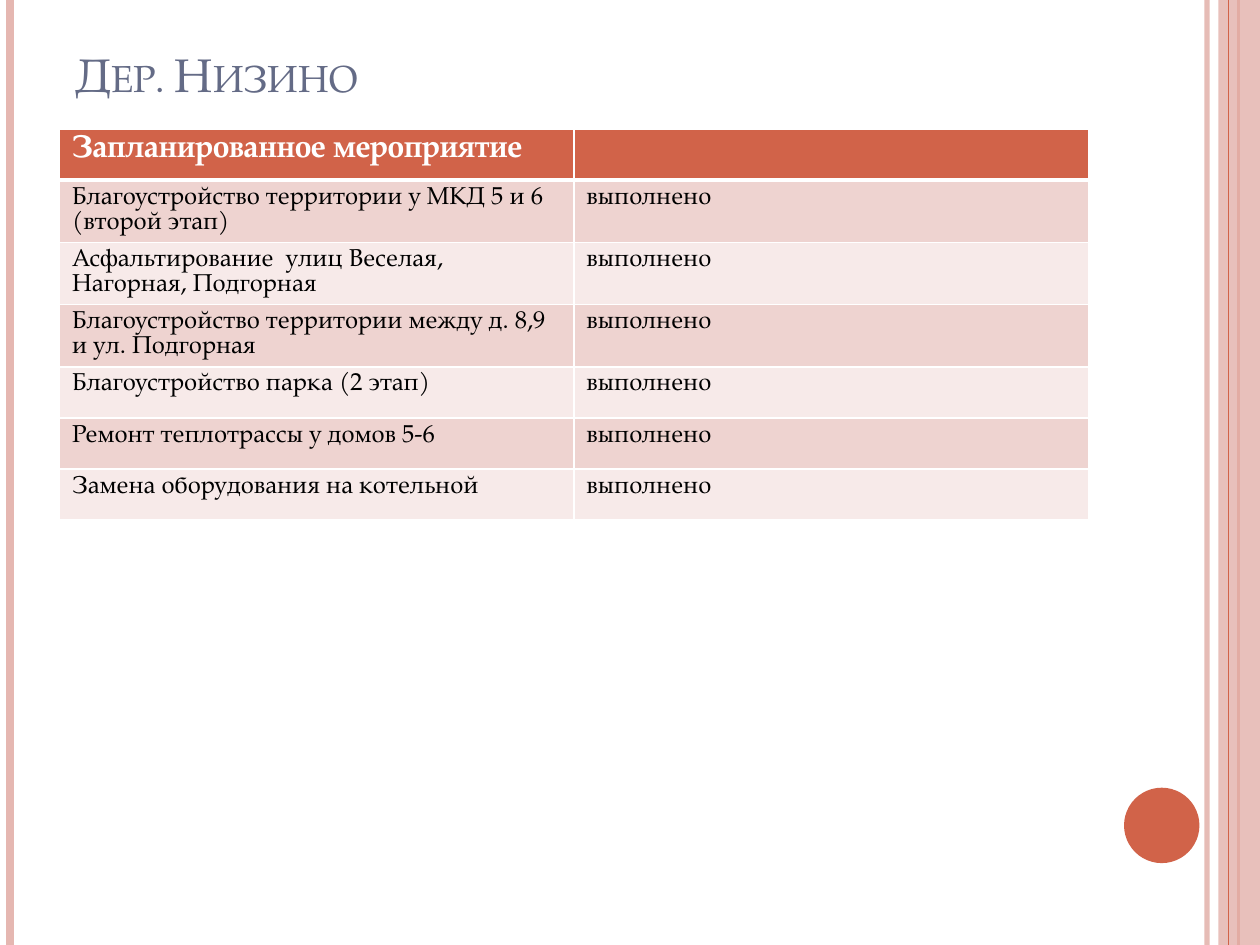
from lxml.etree import SubElement
from pptx import Presentation
from pptx.dml.color import RGBColor
from pptx.enum.shapes import MSO_CONNECTOR, MSO_SHAPE
from pptx.enum.text import MSO_ANCHOR, PP_ALIGN
from pptx.oxml.ns import qn
from pptx.util import Cm, Pt

FONT = "TeX Gyre Pagella"
RUST = RGBColor(0xD1, 0x63, 0x49)
PINK = RGBColor(0xE5, 0xB7, 0xB1)
SLATE = RGBColor(0x64, 0x6B, 0x86)
WHITE = RGBColor(0xFF, 0xFF, 0xFF)
BLACK = RGBColor(0, 0, 0)
BANDS = [RGBColor(0xEE, 0xD3, 0xD0), RGBColor(0xF7, 0xEA, 0xE9)]

HEADERS = ("Запланированное мероприятие", "")
DONE = "выполнено"
WORKS = [
    "Благоустройство территории у МКД 5 и 6 (второй этап)",
    "Асфальтирование  улиц Веселая, Нагорная, Подгорная",
    "Благоустройство территории между д. 8,9 и ул. Подгорная",
    "Благоустройство парка (2 этап)",
    "Ремонт теплотрассы у домов 5-6",
    "Замена оборудования на котельной",
]


def set_alpha(fill, percent):
    color = fill._xPr.find(qn("a:solidFill"))[0]
    SubElement(color, qn("a:alpha")).set("val", str(percent * 1000))


def add_borders(cell, bottom_width):
    """Draw white cell borders; they must precede the fill in the XML."""
    props = cell._tc.get_or_add_tcPr()
    for side, width in (("L", 1), ("R", 1), ("T", 1), ("B", bottom_width)):
        border = SubElement(props, qn(f"a:ln{side}"), w=str(Pt(width)))
        solid = SubElement(border, qn("a:solidFill"))
        SubElement(solid, qn("a:srgbClr"), val=str(WHITE))


deck = Presentation()
deck.slide_width, deck.slide_height = Cm(25.4), Cm(19.05)
page = deck.slides.add_slide(deck.slide_layouts[5])

# Side stripes: the second rust line lies under the translucent band
band = None
for x, color, width, alpha in [
    (24.33, PINK, 3, 93),
    (0.2, PINK, 4.5, 100),
    (24.97, RUST, 1.5, 100),
    (24.77, RUST, 0.75, 100),
]:
    if width == 0.75:
        band = page.shapes.add_shape(
            MSO_SHAPE.RECTANGLE, Cm(24.56), 0, Cm(0.84), deck.slide_height)
    stripe = page.shapes.add_connector(
        MSO_CONNECTOR.STRAIGHT, Cm(x), 0, Cm(x), deck.slide_height)
    stripe.line.color.rgb = color
    stripe.line.width = Pt(width)
    if alpha < 100:
        set_alpha(stripe.line.fill, alpha)
    SubElement(stripe._element.spPr, qn("a:effectLst"))

circle = page.shapes.add_shape(
    MSO_SHAPE.OVAL, Cm(22.66), Cm(15.88), Cm(1.52), Cm(1.52))
for shape, color in ((band, PINK), (circle, RUST)):
    shape.shadow.inherit = False
    shape.fill.solid()
    shape.fill.fore_color.rgb = color
    shape.line.fill.background()
set_alpha(band.fill, 87)

# Title
title = page.shapes.title
title.left, title.top, title.width, title.height = (
    Cm(1.27), Cm(0.76), Cm(20.75), Cm(1.42))
title.text_frame.vertical_anchor = MSO_ANCHOR.BOTTOM
para = title.text_frame.paragraphs[0]
para.alignment = PP_ALIGN.LEFT
span = para.add_run()
span.text = "Дер. Низино"
span.font.name, span.font.size = FONT, Pt(27)
span.font.color.rgb = SLATE
span.font._element.set("cap", "small")

# Table of planned works
rows = [HEADERS] + [(work, DONE) for work in WORKS]
table = page.shapes.add_table(
    len(rows), 2, Cm(1.2), Cm(2.6), Cm(20.74), Cm(1.03) * len(rows)).table
for r, texts in enumerate(rows):
    is_header = r == 0
    for c, text in enumerate(texts):
        cell = table.cell(r, c)
        add_borders(cell, 3 if is_header else 1)
        cell.fill.solid()
        cell.fill.fore_color.rgb = RUST if is_header else BANDS[(r - 1) % 2]
        cell.text = text
        font = cell.text_frame.paragraphs[0].font
        font.name = FONT
        font.size = Pt(18 if is_header else 14)
        font.bold = is_header
        font.color.rgb = WHITE if is_header else BLACK

deck.save("out.pptx")
